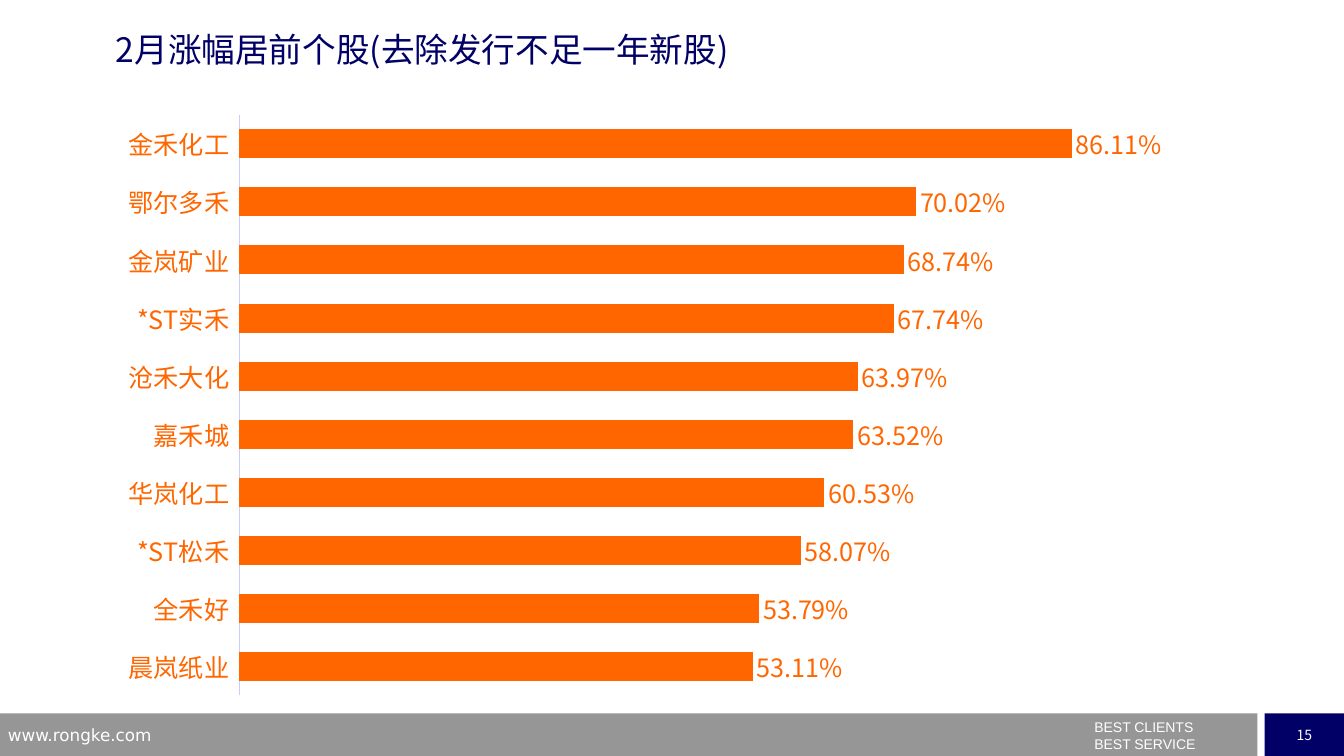
from dataclasses import dataclass

from lxml.etree import SubElement
from pptx import Presentation
from pptx.chart.data import CategoryChartData
from pptx.dml.color import RGBColor
from pptx.enum.chart import XL_CHART_TYPE, XL_LABEL_POSITION, XL_TICK_LABEL_POSITION, XL_TICK_MARK
from pptx.enum.shapes import MSO_SHAPE
from pptx.enum.text import MSO_ANCHOR, PP_ALIGN
from pptx.oxml import parse_xml
from pptx.oxml.ns import nsdecls, qn
from pptx.util import Cm, Pt


@dataclass(frozen=True)
class Theme:
    navy: str = "000066"
    grey: str = "969696"
    white: str = "FFFFFF"
    orange: str = "FF6600"
    axis: str = "C9CCFF"
    main: str = "Noto Sans CJK SC"
    web: str = "DejaVu Sans"
    motto: str = "Arial"
    head: int = 24
    label: int = 18
    site: int = 12
    small: int = 10


THEME = Theme()

# Monthly gains, lowest first because bars stack upward
GAINS = [
    ("晨岚纸业", 0.5311), ("全禾好", 0.5379), ("*ST松禾", 0.5807),
    ("华岚化工", 0.6053), ("嘉禾城", 0.6352), ("沧禾大化", 0.6397),
    ("*ST实禾", 0.6774), ("金岚矿业", 0.6874), ("鄂尔多禾", 0.7002),
    ("金禾化工", 0.8611),
]


def style(font, size, color, name=THEME.main):
    font.size = Pt(size)
    font.bold = False
    font.color.rgb = RGBColor.from_string(color)
    font.name = name
    SubElement(font._rPr, qn("a:ea")).set("typeface", name)


def write(shape, lines, size, color, name=THEME.main,
          align=PP_ALIGN.LEFT, anchor=MSO_ANCHOR.MIDDLE, wrap=True):
    frame = shape.text_frame
    frame.word_wrap = wrap
    frame.vertical_anchor = anchor
    frame.margin_left = frame.margin_right = 0
    frame.margin_top = frame.margin_bottom = 0
    for i, line in enumerate(lines):
        para = frame.add_paragraph() if i else frame.paragraphs[0]
        para.alignment = align
        para.space_before = Pt(0)
        run = para.add_run()
        run.text = line
        style(run.font, size, color, name)


def block(slide, box, color):
    rect = slide.shapes.add_shape(MSO_SHAPE.RECTANGLE, *box)
    rect.shadow.inherit = False
    rect.fill.solid()
    rect.fill.fore_color.rgb = RGBColor.from_string(color)
    rect.line.fill.background()
    return rect


def footer(slide, left, top, width, height):
    # Grey band and page number
    page = Cm(2)
    band = width - page - Cm(0.18)
    block(slide, (left, top, band, height), THEME.grey)
    tile = block(slide, (left + width - page, top, page, height), THEME.navy)
    write(tile, ["15"], THEME.small, THEME.white, align=PP_ALIGN.CENTER, wrap=False)
    # Web address and motto
    site = slide.shapes.add_textbox(left + Cm(0.2), top, Cm(8), height)
    write(site, ["www.rongke.com"], THEME.site, THEME.white, THEME.web)
    motto = slide.shapes.add_textbox(left + Cm(27.58), top + Cm(0.12), Cm(4), Cm(0.9))
    write(motto, ["BEST CLIENTS", "BEST SERVICE"], THEME.small, THEME.white,
          THEME.motto, anchor=MSO_ANCHOR.TOP)


def heading(slide, *box):
    title = slide.shapes.title
    title.left, title.top, title.width, title.height = box
    write(title, ["2月涨幅居前个股(去除发行不足一年新股)"], THEME.head, THEME.navy)


def place(chart, x, y, w, h):
    # Fix the inner plot area as shares of the chart
    area = chart._chartSpace.chart.plotArea
    for old in area.findall(qn("c:layout")):
        area.remove(old)
    area.insert(0, parse_xml(
        f'<c:layout {nsdecls("c")}><c:manualLayout><c:layoutTarget val="inner"/>'
        '<c:xMode val="edge"/><c:yMode val="edge"/>'
        f'<c:x val="{x}"/><c:y val="{y}"/><c:w val="{w}"/><c:h val="{h}"/>'
        '</c:manualLayout></c:layout>'))


def bars(slide, *box):
    data = CategoryChartData(number_format="0.00%")
    data.categories = [name for name, gain in GAINS]
    data.add_series("Series 1", [gain for name, gain in GAINS])
    chart = slide.shapes.add_chart(XL_CHART_TYPE.BAR_CLUSTERED, *box, data).chart
    chart.has_legend = False
    chart.has_title = False
    style(chart.font, THEME.label, THEME.orange)
    place(chart, 0.11, 0.02, 0.87, 0.96)

    # Axes
    cats = chart.category_axis
    cats.major_tick_mark = cats.minor_tick_mark = XL_TICK_MARK.NONE
    cats.tick_label_position = XL_TICK_LABEL_POSITION.LOW
    cats.format.line.color.rgb = RGBColor.from_string(THEME.axis)
    cats.format.line.width = Pt(0.75)
    style(cats.tick_labels.font, THEME.label, THEME.orange)
    vals = chart.value_axis
    vals.minimum_scale, vals.maximum_scale = 0, 1
    vals.has_major_gridlines = False
    vals.visible = False

    # Bars and labels
    plot = chart.plots[0]
    plot.gap_width = 100
    plot.vary_by_categories = False
    fill = plot.series[0].format.fill
    fill.solid()
    fill.fore_color.rgb = RGBColor.from_string(THEME.orange)
    plot.has_data_labels = True
    tags = plot.data_labels
    tags.show_value = True
    tags.number_format = "0.00%"
    tags.number_format_is_linked = False
    tags.position = XL_LABEL_POSITION.OUTSIDE_END
    style(tags.font, THEME.label, THEME.orange)


def main():
    deck = Presentation()
    deck.slide_width, deck.slide_height = Cm(33.87), Cm(19.05)
    slide = deck.slides.add_slide(deck.slide_layouts[5])
    high = Cm(1.07)
    footer(slide, 0, deck.slide_height - high, deck.slide_width, high)
    heading(slide, Cm(2.92), Cm(0.71), Cm(22.86), Cm(1.04))
    bars(slide, Cm(2.95), Cm(2.59), Cm(28), Cm(15.24))
    deck.save("out.pptx")


if __name__ == "__main__":
    main()
